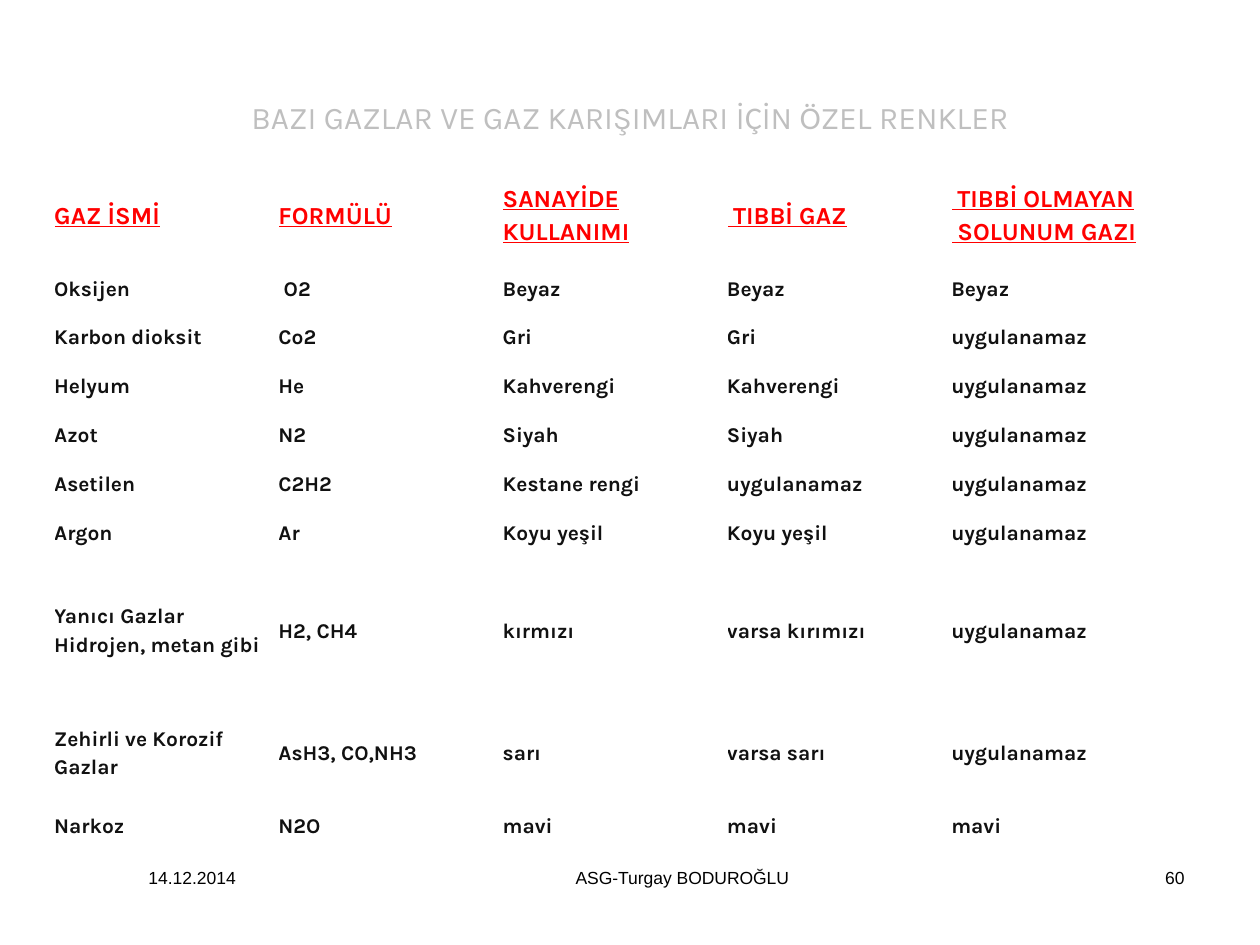
from copy import deepcopy

from pptx import Presentation
from pptx.dml.color import RGBColor
from pptx.enum.text import MSO_ANCHOR, MSO_AUTO_SIZE, PP_ALIGN
from pptx.oxml.ns import qn
from pptx.util import Inches, Pt

LEFT, CENTER, RIGHT = PP_ALIGN.LEFT, PP_ALIGN.CENTER, PP_ALIGN.RIGHT
MIDDLE = MSO_ANCHOR.MIDDLE
GROW = MSO_AUTO_SIZE.SHAPE_TO_FIT_TEXT

WIDTH, HEIGHT = 10, 7.5

# Text formats
HEADER = {"size": 14, "name": "Karla", "color": "FF0000", "bold": True, "underline": True}
BODY = {"size": 12, "name": "Karla", "color": "111111", "bold": True, "underline": False}
FOOTER = {"size": 10, "name": "Arial", "color": "000000"}
TITLE = {"size": 18, "name": "Karla", "color": "BFBFBF"}
TITLE_FALLBACK = {**TITLE, "name": "Calibri"}

# Title letters drawn in the fallback font stand on their own
TITLE_PARTS = [
    ("BAZI GAZLAR VE GAZ KARIŞIMLARI İ", TITLE),
    ("Ç", TITLE_FALLBACK),
    ("İN ", TITLE),
    ("Ö", TITLE_FALLBACK),
    ("ZEL RENKLER", TITLE),
]

GASES = [
    ("GAZ İSMİ", "FORMÜLÜ", "SANAYİDE KULLANIMI", " TIBBİ GAZ", " TIBBİ OLMAYAN\n SOLUNUM GAZI"),
    ("Oksijen", " O2", "Beyaz", "Beyaz", "Beyaz"),
    ("Karbon dioksit", "Co2", "Gri", "Gri", "uygulanamaz"),
    ("Helyum", "He", "Kahverengi", "Kahverengi", "uygulanamaz"),
    ("Azot", "N2", "Siyah", "Siyah", "uygulanamaz"),
    ("Asetilen", "C2H2", "Kestane rengi", "uygulanamaz", "uygulanamaz"),
    ("Argon", "Ar", "Koyu yeşil", "Koyu yeşil", "uygulanamaz"),
    ("Yanıcı Gazlar\nHidrojen, metan gibi", "H2, CH4", "kırmızı", "varsa kırımızı", "uygulanamaz"),
    ("Zehirli ve Korozif Gazlar", "AsH3, CO,NH3", "sarı", "varsa sarı", "uygulanamaz"),
    ("Narkoz", "N2O", "mavi", "mavi", "mavi"),
]
# Row heights as multiples of one line
ROW_LINES = [2, 1, 1, 1, 1, 1, 1, 3, 2, 1]
TABLE_LEFT, TABLE_TOP, TABLE_WIDTH, TABLE_HEIGHT = 0.43, 1.31, 8.9, 5.43

# Footer: left edge, width, alignment, text
FOOTERS = [
    (1.08, 2.33, LEFT, "14.12.2014"),
    (3.83, 3.17, CENTER, "ASG-Turgay BODUROĞLU"),
    (7.17, 2.33, RIGHT, "60"),
]


def color(hex_value):
    return RGBColor.from_string(hex_value)


def format_font(font, style):
    for key, value in style.items():
        if key == "color":
            font.color.rgb = color(value)
        else:
            setattr(font, key, Pt(value) if key == "size" else value)


def add_text(slide, left, top, width, height, parts, align, wrap=True):
    box = slide.shapes.add_textbox(Inches(left), Inches(top), Inches(width), Inches(height))
    frame = box.text_frame
    frame.word_wrap = wrap
    line = frame.paragraphs[0]
    line.alignment = align
    for text, style in parts:
        run = line.add_run()
        run.text = text
        format_font(run.font, style)
    return frame


def fill_cell(cell, text, style):
    cell.fill.background()
    cell.vertical_anchor = MIDDLE
    for side in ("left", "right", "top", "bottom"):
        setattr(cell, f"margin_{side}", 0)
    line = cell.text_frame.paragraphs[0]
    line.text = text
    line.line_spacing = 1.15
    for run in line.runs:
        format_font(run.font, style)
    # Line breaks take the size of the text around them
    for line_break in line._p.findall(qn("a:br")):
        line_break.insert(0, deepcopy(line.runs[0].font._rPr))


def add_gas_table(slide):
    column_count = len(GASES[0])
    table = slide.shapes.add_table(
        len(GASES), column_count, Inches(TABLE_LEFT), Inches(TABLE_TOP),
        Inches(TABLE_WIDTH), Inches(TABLE_HEIGHT)).table
    table.first_row = table.horz_banding = False
    for column in table.columns:
        column.width = Inches(TABLE_WIDTH / column_count)
    line_height = TABLE_HEIGHT / sum(ROW_LINES)
    for index, (row, gas) in enumerate(zip(table.rows, GASES)):
        row.height = Inches(line_height * ROW_LINES[index])
        for cell, text in zip(row.cells, gas):
            fill_cell(cell, text, BODY if index else HEADER)


def main():
    deck = Presentation()
    deck.slide_width, deck.slide_height = Inches(WIDTH), Inches(HEIGHT)
    slide = deck.slides.add_slide(deck.slide_layouts[6])

    # Footer line
    for left, width, align, text in FOOTERS:
        add_text(slide, left, 6.83, width, 0.5, [(text, FOOTER)], align)

    # Gas colours
    add_gas_table(slide)

    # Title, centred on the slide
    title_width = 6.54
    title = add_text(slide, (WIDTH - title_width) / 2, 0.64, title_width, 0.57,
                     TITLE_PARTS, CENTER, wrap=False)
    title.vertical_anchor = MIDDLE
    title.auto_size = GROW

    deck.save("out.pptx")


if __name__ == "__main__":
    main()
